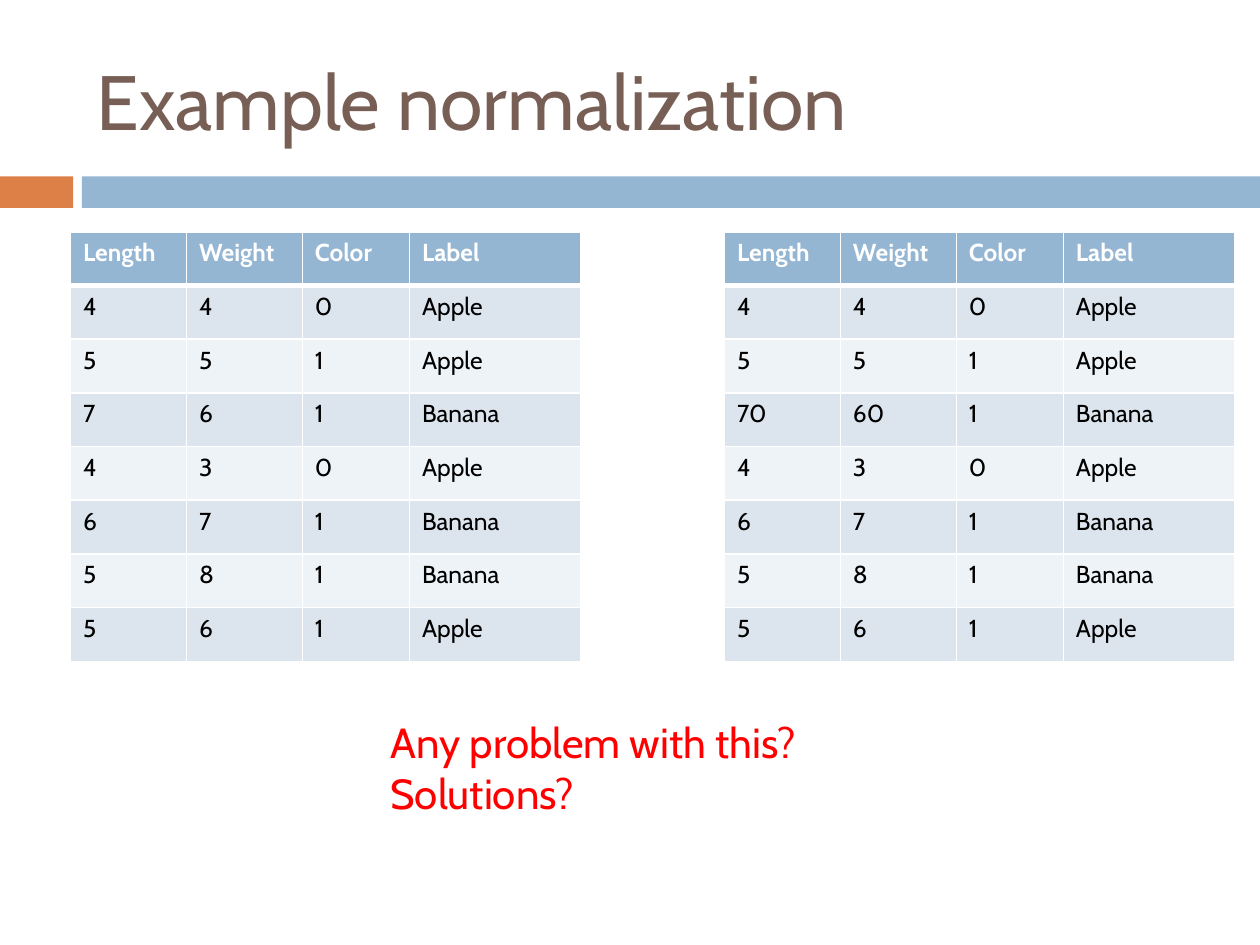
from lxml import etree
from pptx import Presentation
from pptx.dml.color import RGBColor
from pptx.enum import shapes, text
from pptx.oxml import ns
from pptx.util import Inches, Pt

# Content
TITLE = "Example normalization"
QUESTIONS = ["Any problem with this?", "Solutions?"]
HEADER = ("Length", "Weight", "Color", "Label")
FRUIT = [
    (4, 4, 0, "Apple"),
    (5, 5, 1, "Apple"),
    (7, 6, 1, "Banana"),
    (4, 3, 0, "Apple"),
    (6, 7, 1, "Banana"),
    (5, 8, 1, "Banana"),
    (5, 6, 1, "Apple"),
]
SCALED = [(70, 60, 1, "Banana") if row[0] == 7 else row for row in FRUIT]
TABLES = [(0.56, FRUIT), (5.75, SCALED)]

# Style
FONT = "Cabin"
BLUE, ORANGE, BROWN, RED = "94B6D2", "DD8047", "775F55", "FF0000"
WHITE, BLACK = "FFFFFF", "000000"
BANDS = ("EEF3F7", "DCE5EE")
COL_WIDTHS = (0.92, 0.92, 0.85, 1.36)
TABLE_TOP, ROW_HEIGHT = 1.84, 3.41 / 8


def rgb(value):
    return RGBColor.from_string(value)


def set_font(p, size, color, bold=False):
    p.font.name, p.font.size, p.font.bold = FONT, Pt(size), bold
    p.font.color.rgb = rgb(color)


def add_bar(s, left, width, color):
    sp = s.shapes.add_shape(shapes.MSO_SHAPE.RECTANGLE, Inches(left), Inches(1.4),
                            Inches(width), Inches(0.25))
    sp.shadow.inherit = False
    sp.fill.solid()
    sp.fill.fore_color.rgb = rgb(color)
    sp.line.fill.background()


def add_text(s, box, lines, size, color, anchor):
    tf = s.shapes.add_textbox(*map(Inches, box)).text_frame
    tf.word_wrap = True
    tf.vertical_anchor = anchor
    tf.text = "\n".join(lines)
    for p in tf.paragraphs:
        set_font(p, size, color)


def set_borders(cell, widths):
    tc_pr = cell._tc.get_or_add_tcPr()
    for side, width in zip("LRTB", widths):
        ln = etree.SubElement(tc_pr, ns.qn("a:ln" + side), w=str(Pt(width)))
        fill = etree.SubElement(ln, ns.qn("a:solidFill"))
        etree.SubElement(fill, ns.qn("a:srgbClr"), val=WHITE)


def add_data_table(s, left, data):
    rows = [HEADER] + data
    table = s.shapes.add_table(len(rows), len(HEADER), Inches(left), Inches(TABLE_TOP),
                               Inches(sum(COL_WIDTHS)),
                               Inches(ROW_HEIGHT * len(rows))).table
    for column, width in zip(table.columns, COL_WIDTHS):
        column.width = Inches(width)
    for r, row in enumerate(rows):
        head = r == 0
        for c, value in enumerate(row):
            cell = table.cell(r, c)
            # A thick rule separates the header from the body
            set_borders(cell, (1, 1, 3 if r == 1 else 1, 3 if head else 1))
            cell.fill.solid()
            cell.fill.fore_color.rgb = rgb(BLUE if head else BANDS[r % 2])
            cell.text = str(value)
            set_font(cell.text_frame.paragraphs[0], 14, WHITE if head else BLACK, head)


prs = Presentation()
prs.slide_width, prs.slide_height = Inches(10), Inches(7.5)
s = prs.slides.add_slide(prs.slide_layouts[6])

# Title and divider bars
add_bar(s, 0, 0.58, ORANGE)
add_bar(s, 0.65, 9.35, BLUE)
add_text(s, (0.67, 0.25, 8.92, 1.08), [TITLE], 44, BROWN, text.MSO_ANCHOR.MIDDLE)

# Tables and the questions below them
for left, data in TABLES:
    add_data_table(s, left, data)
add_text(s, (3, 5.64, 3.99, 0.91), QUESTIONS, 24, RED, text.MSO_ANCHOR.TOP)

prs.save("out.pptx")
